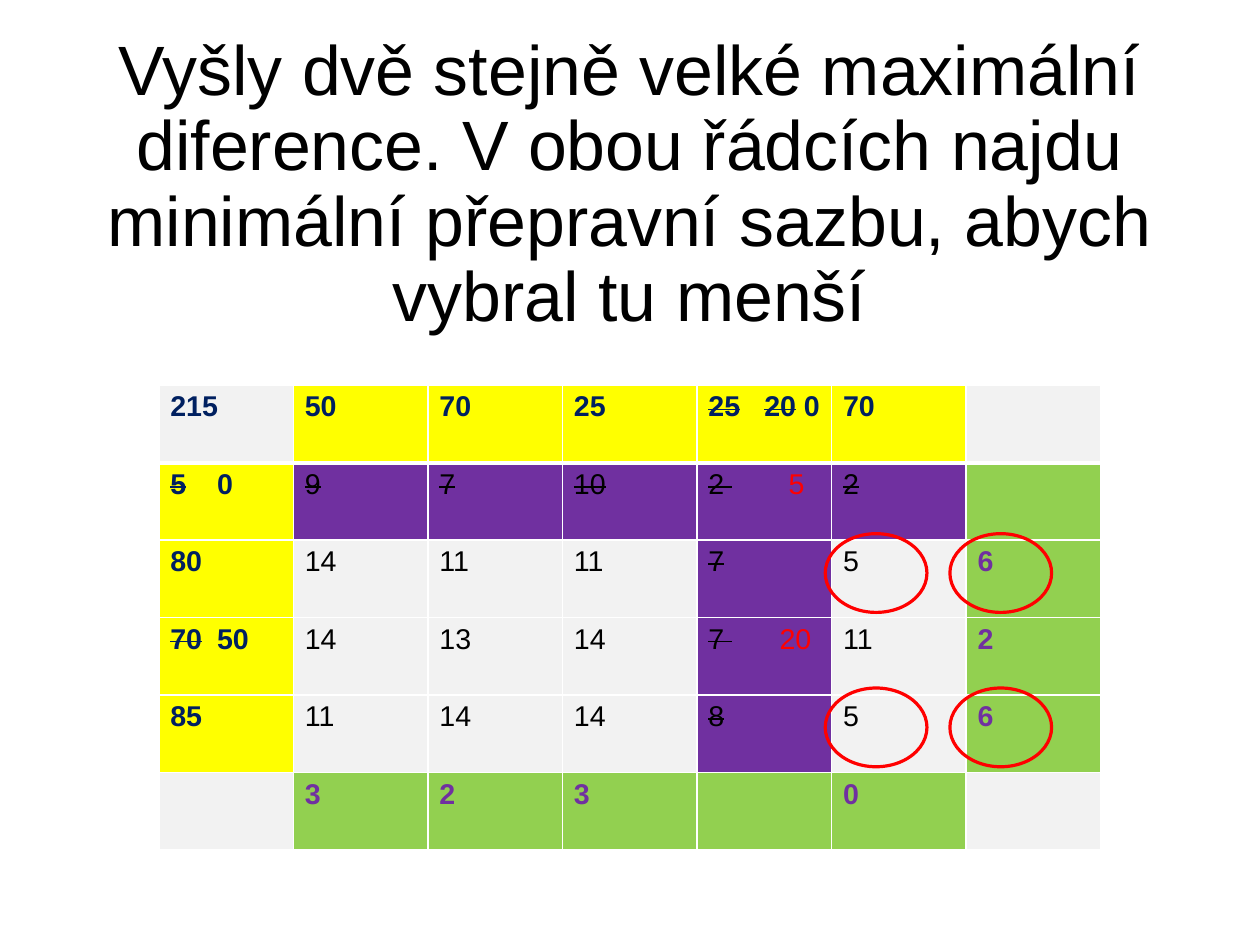
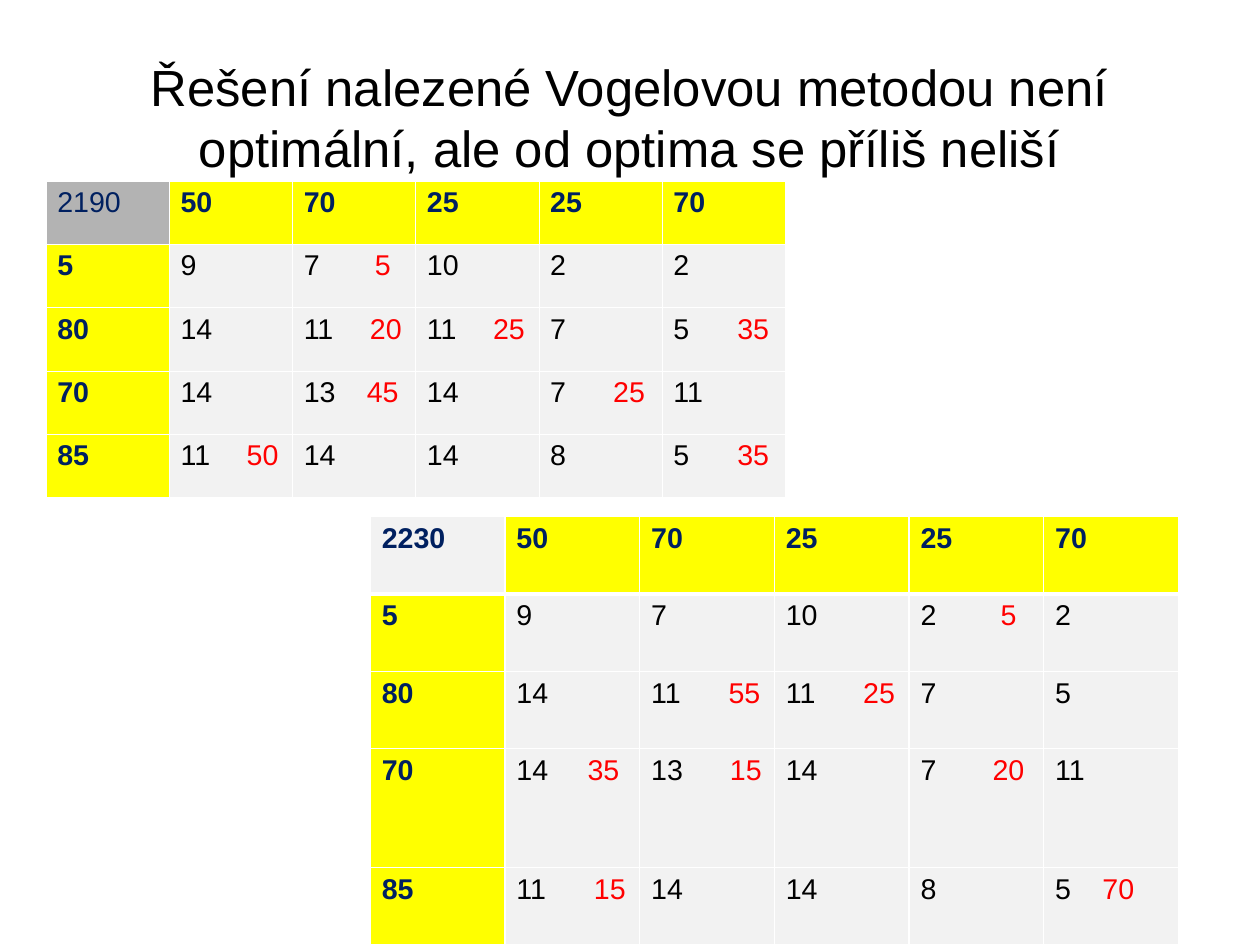
from itertools import product

from lxml import etree
from pptx import Presentation
from pptx.dml.color import RGBColor
from pptx.enum.shapes import MSO_SHAPE
from pptx.enum.text import MSO_ANCHOR, MSO_AUTO_SIZE, PP_ALIGN
from pptx.oxml.ns import qn
from pptx.util import Cm, Pt

OVAL = MSO_SHAPE.OVAL
MIDDLE = MSO_ANCHOR.MIDDLE
NO_FIT = MSO_AUTO_SIZE.NONE
CENTER = PP_ALIGN.CENTER

FONT = "Arial"
BLACK, WHITE, RED = "000000", "FFFFFF", "FF0000"
NAVY, PURPLE, GREY = "002060", "7030A0", "F2F2F2"

# Cell kinds: fill, ink, bold, ink after the tab
KINDS = {
    "T": (GREY, NAVY, True, NAVY),          # total cost
    "D": ("B3B3B3", NAVY, False, NAVY),     # total cost, dark
    "Y": ("FFFF00", NAVY, True, NAVY),      # supply and demand
    "W": (GREY, BLACK, False, RED),         # open rate
    "P": (PURPLE, BLACK, False, RED),       # closed rate
    "G": ("92D050", PURPLE, True, PURPLE),  # difference
}

# "~" turns strike-through on and off; a tuple is (text, tab stop in cm, text)
STEP = [
    ["215", "50", "70", "25", ("~25~", 1.24, "~20~ 0"), "70", ""],
    [("~5~", 1.04, "0"), "~9~", "~7~", "~10~", ("~2 ~", 1.78, "5"), "~2~", ""],
    ["80", "14", "11", "11", "~7~", "5", "6"],
    [("~70~", 1.04, "50"), "14", "13", "14", ("~7 ~", 1.58, "20"), "11", "2"],
    ["85", "11", "14", "14", "~8~", "5", "6"],
    ["", "3", "2", "3", "", "0", ""],
]
STEP_KINDS = ["TYYYYYW", "YPPPPPG", "YWWWPWG", "YWWWPWG", "YWWWPWG", "WGGGGGW"]

BEST = [
    ["2190", "50", "70", "25", "25", "70"],
    ["5", "9", ("7", 1.58, "5"), "10", "2", "2"],
    ["80", "14", ("11", 1.47, "20"), ("11", 1.47, "25"), "7", ("5", 1.42, "35")],
    ["70", "14", ("13", 1.4, "45"), "14", ("7", 1.4, "25"), "11"],
    ["85", ("11", 1.47, "50"), "14", "14", "8", ("5", 1.42, "35")],
]
VOGEL = [
    ["2230", "50", "70", "25", "25", "70"],
    ["5", "9", "7", "10", ("2", 1.78, "5"), "2"],
    ["80", "14", ("11", 1.72, "55"), ("11", 1.72, "25"), "7", "5"],
    ["70", ("14", 1.58, "35"), ("13", 1.75, "15"), "14", ("7", 1.6, "20"), "11"],
    ["85", ("11", 1.72, "15"), "14", "14", "8", ("5", 1.05, "70")],
]
RATES = ["YWWWWW"] * 4


def rgb(code):
    return RGBColor.from_string(code)


def add_run(para, text, size, ink, bold=False, strike=False):
    run = para.add_run()
    run.text = text
    font = run.font
    font.name, font.size, font.bold = FONT, Pt(size), bold
    font.color.rgb = rgb(ink)
    if strike:
        run._r.get_or_add_rPr().set("strike", "sngStrike")


def add_title(slide, text, top, size, space=1.0):
    title = slide.shapes.title
    title.left, title.top = Cm(1.4), Cm(top)
    title.width, title.height = Cm(25.2), Cm(3.5)
    frame = title.text_frame
    frame.word_wrap = True
    frame.auto_size = NO_FIT
    frame.vertical_anchor = MIDDLE
    frame.margin_left = frame.margin_right = 0
    frame.margin_top = frame.margin_bottom = 0
    para = frame.paragraphs[0]
    para.alignment = CENTER
    para.line_spacing = space
    add_run(para, text, size, BLACK)


def set_stop(para, stop):
    """Give the paragraph one left tab stop."""
    stops = etree.SubElement(para._p.get_or_add_pPr(), qn("a:tabLst"))
    etree.SubElement(stops, qn("a:tab"), pos=str(Cm(stop)), algn="l")


def set_edges(cell, widths):
    """Draw white cell borders; widths maps side to points."""
    props = cell._tc.get_or_add_tcPr()
    for at, side in enumerate(("lnL", "lnR", "lnT", "lnB")):
        line = etree.Element(qn("a:" + side), w=str(Pt(widths[side])))
        fill = etree.SubElement(line, qn("a:solidFill"))
        etree.SubElement(fill, qn("a:srgbClr"), val=WHITE)
        props.insert(at, line)


def fill_cell(cell, item, kind):
    back, ink, bold, late = KINDS[kind]
    cell.fill.solid()
    cell.fill.fore_color.rgb = rgb(back)
    para = cell.text_frame.paragraphs[0]
    parts = [(item, ink)]
    if isinstance(item, tuple):
        text, stop, more = item
        set_stop(para, stop)
        parts = [(text, ink), ("\t", ink), (more, late)]
    for text, color in parts:
        for num, piece in enumerate(text.split("~")):
            if piece:
                add_run(para, piece, 18, color, bold, num % 2 == 1)


def add_grid(slide, box, rows, kinds, tall=None, line=1, rule=1):
    """Place a cost table; rule is the line width under the first row."""
    left, top, width, height = box
    count = len(rows[0])
    tall = tall or [height / len(rows)] * len(rows)
    frame = slide.shapes.add_table(
        len(rows), count, Cm(left), Cm(top), Cm(width), Cm(height))
    table = frame.table
    table.first_row = table.horz_banding = False
    for col in table.columns:
        col.width = Cm(width / count)
    for row, size in zip(table.rows, tall):
        row.height = Cm(size)
    for r, c in product(range(len(rows)), range(count)):
        cell = table.cell(r, c)
        fill_cell(cell, rows[r][c], kinds[r][c])
        set_edges(cell, {"lnL": line, "lnR": line,
                         "lnT": rule if r == 1 else line,
                         "lnB": rule if r == 0 else line})


def add_rings(slide, box):
    """Ring the tied differences and the lowest rates in their rows."""
    left, top = box[:2]
    for col, row in product(range(2), range(2)):
        ring = slide.shapes.add_shape(
            OVAL, Cm(left + 14.81 + 2.77 * col), Cm(top + 3.3 + 3.43 * row),
            Cm(2.26), Cm(1.75))
        ring.shadow.inherit = False
        ring.fill.background()
        ring.line.color.rgb = rgb(RED)
        ring.line.width = Pt(2)


def step_slide(slide):
    box = (3.53, 8.56, 20.93, 10.33)
    add_title(slide, "Vyšly dvě stejně velké maximální diference. V obou "
              "řádcích najdu minimální přepravní sazbu, abych vybral tu menší",
              2.38, 44, 0.9)
    add_grid(slide, box, STEP, STEP_KINDS, rule=3)
    add_rings(slide, box)


def result_slide(slide):
    add_title(slide, "Řešení nalezené Vogelovou metodou není optimální, "
              "ale od optima se příliš neliší", 0.84, 32)
    add_grid(slide, (1.02, 4.02, 16.43, 7.04), BEST, ["DYYYYY"] + RATES,
             line=0.06, rule=0.06)
    add_grid(slide, (8.23, 11.48, 17.96, 9.52), VOGEL, ["TYYYYY"] + RATES,
             tall=[1.72, 1.72, 1.72, 2.64, 1.72], rule=3)


def main():
    deck = Presentation()
    deck.slide_width, deck.slide_height = Cm(28), Cm(21)
    plain = deck.slide_layouts[5]
    for build in (step_slide, result_slide):
        build(deck.slides.add_slide(plain))
    deck.save("out.pptx")


if __name__ == "__main__":
    main()
